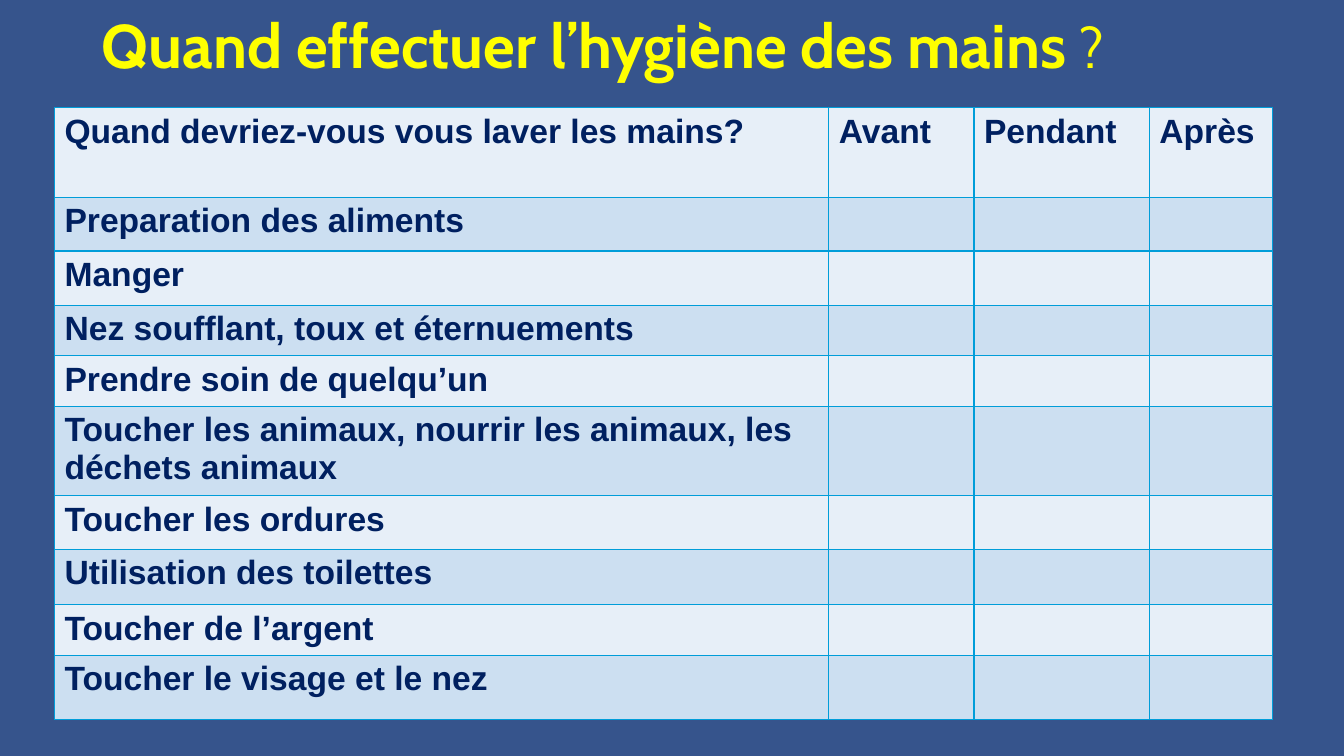
from dataclasses import dataclass

from lxml import etree
from pptx import Presentation
from pptx.dml.color import RGBColor
from pptx.enum.text import MSO_ANCHOR, MSO_AUTO_SIZE, PP_ALIGN
from pptx.oxml.ns import qn
from pptx.util import Inches, Pt

MIDDLE = MSO_ANCHOR.MIDDLE
NO_FIT = MSO_AUTO_SIZE.NONE
LEFT = PP_ALIGN.LEFT

BACKGROUND = "36548C"
YELLOW = "FFFF00"
NAVY = "002060"
BORDER = "009DD9"
BANDS = ("E7EFF8", "CCDFF1")
COLUMN_WIDTHS = (7.68, 1.44, 1.74, 1.22)


@dataclass
class Row:
    height: float
    texts: tuple[str, ...]


ROWS = (
    Row(0.89, ("Quand devriez-vous vous laver les mains?", "Avant", "Pendant", "Après")),
    Row(0.53, ("Preparation des aliments",)),
    Row(0.54, ("Manger",)),
    Row(0.5, ("Nez soufflant, toux et éternuements",)),
    Row(0.5, ("Prendre soin de quelqu’un",)),
    Row(0.89, ("Toucher les animaux, nourrir les animaux, les déchets animaux",)),
    Row(0.53, ("Toucher les ordures",)),
    Row(0.55, ("Utilisation des toilettes",)),
    Row(0.5, ("Toucher de l’argent",)),
    Row(0.64, ("Toucher le visage et le nez",)),
)


def color(value: str) -> RGBColor:
    return RGBColor.from_string(value)


def set_font(font, name: str, size: float, value: str) -> None:
    font.name = name
    font.size = Pt(size)
    font.bold = True
    font.color.rgb = color(value)


def add_borders(cell) -> None:
    properties = cell._tc.get_or_add_tcPr()
    for position, side in enumerate(("lnL", "lnR", "lnT", "lnB")):
        line = etree.Element(qn(f"a:{side}"), w=str(Pt(1)))
        fill = etree.SubElement(line, qn("a:solidFill"))
        etree.SubElement(fill, qn("a:srgbClr"), val=BORDER)
        properties.insert(position, line)


def format_title(title) -> None:
    title.left, title.top = Inches(0.91), Inches(0.35)
    title.width, title.height = Inches(10.52), Inches(0.26)
    frame = title.text_frame
    frame.word_wrap = True
    frame.auto_size = NO_FIT
    frame.vertical_anchor = MIDDLE
    para = frame.paragraphs[0]
    para.alignment = LEFT
    para.line_spacing = 0.9
    set_font(para.font, "Cabin", 44, YELLOW)
    para.add_run().text = "Quand effectuer l’hygiène des mains"
    mark = para.add_run()
    mark.text = " ?"
    mark.font.size = Pt(40)
    mark.font.bold = False


def add_hygiene_table(page) -> None:
    frame = page.shapes.add_table(
        len(ROWS), len(COLUMN_WIDTHS), Inches(0.54), Inches(1.07), Inches(12.08), Inches(6.07)
    )
    table = frame.table
    for column, width in zip(table.columns, COLUMN_WIDTHS):
        column.width = Inches(width)
    for index, row in enumerate(ROWS):
        table.rows[index].height = Inches(row.height)
        for cell in table.rows[index].cells:
            cell.fill.solid()
            cell.fill.fore_color.rgb = color(BANDS[index % 2])
            add_borders(cell)
        for cell, text in zip(table.rows[index].cells, row.texts):
            cell.text = text
            set_font(cell.text_frame.paragraphs[0].font, "Arial", 24, NAVY)


def main() -> None:
    deck = Presentation()
    deck.slide_width, deck.slide_height = Inches(13.33), Inches(7.5)
    page = deck.slides.add_slide(deck.slide_layouts[5])
    page.background.fill.solid()
    page.background.fill.fore_color.rgb = color(BACKGROUND)
    add_hygiene_table(page)
    format_title(page.shapes.title)
    deck.save("out.pptx")


if __name__ == "__main__":
    main()
